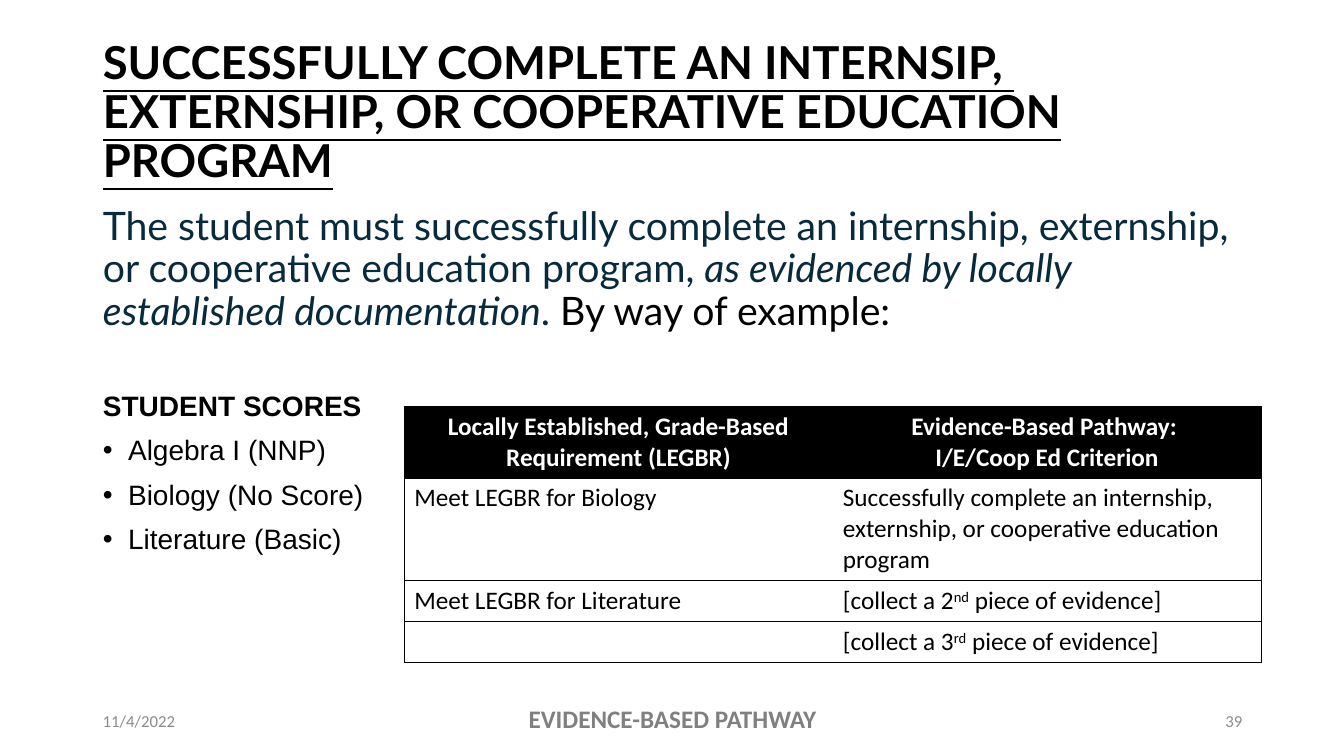
from dataclasses import dataclass

from lxml import etree
from pptx import Presentation
from pptx.dml.color import RGBColor
from pptx.enum.text import MSO_ANCHOR, MSO_AUTO_SIZE, PP_ALIGN
from pptx.oxml.ns import qn
from pptx.util import Inches, Pt

LEFT, CENTER, RIGHT = PP_ALIGN.LEFT, PP_ALIGN.CENTER, PP_ALIGN.RIGHT
TOP, MIDDLE = MSO_ANCHOR.TOP, MSO_ANCHOR.MIDDLE
NO_AUTOFIT = MSO_AUTO_SIZE.NONE


@dataclass(frozen=True)
class Theme:
    """Colours, fonts and type sizes of the slide."""
    black: str = "000000"
    white: str = "FFFFFF"
    navy: str = "082A3D"
    footer_grey: str = "808080"
    date_grey: str = "8C8C8C"
    heading_font: str = "Lato"
    list_font: str = "Arial"
    table_font: str = "Calibri"
    title_size: float = 32.4
    intro_size: float = 28
    list_size: float = 20
    table_size: float = 18
    small_size: float = 12
    line_spacing: float = 0.9


THEME = Theme()
TITLE_LINES = ["SUCCESSFULLY COMPLETE AN INTERNSIP, ",
               "EXTERNSHIP, OR COOPERATIVE EDUCATION PROGRAM"]
INTRO = [
    ("The student must successfully complete an internship, externship, "
     "or cooperative education program, ", THEME.navy, False),
    ("as evidenced by locally established documentation", THEME.navy, True),
    (". ", THEME.navy, False),
    ("By way of example:", THEME.black, False),
]
SCORES = ["Algebra I (NNP)", "Biology (No Score)", "Literature (Basic)"]
HEADERS = [["Locally Established, Grade-Based Requirement (LEGBR)"],
           ["Evidence-Based Pathway: ", "I/E/Coop Ed Criterion"]]
CRITERIA = [
    [["Meet LEGBR for Biology"],
     ["Successfully complete an internship, externship, or cooperative education program"]],
    [["Meet LEGBR for Literature"], ["[collect a 2", "nd", " piece of evidence]"]],
    [[], ["[collect a 3", "rd", " piece of evidence]"]],
]
ROW_HEIGHTS = [0.7, 1.02, 0.4, 0.4]


def style(paragraph, font_name, size, color, bold=False):
    """Set the shared font of a paragraph."""
    font = paragraph.font
    font.name, font.size, font.bold = font_name, Pt(size), bold
    font.color.rgb = RGBColor.from_string(color)


def place(placeholder, box, anchor):
    """Move a placeholder to a box and prepare its text frame."""
    placeholder.left, placeholder.top, placeholder.width, placeholder.height = map(Inches, box)
    frame = placeholder.text_frame
    frame.word_wrap, frame.auto_size, frame.vertical_anchor = True, NO_AUTOFIT, anchor
    return frame


def set_bullet(paragraph, bulleted):
    """Give a paragraph a hanging round bullet, or none."""
    properties = paragraph._p.get_or_add_pPr()
    indent = Inches(0.25) if bulleted else 0
    properties.set("marL", str(indent))
    properties.set("indent", str(-indent))
    if bulleted:
        etree.SubElement(properties, qn("a:buChar"), char="•")
    else:
        etree.SubElement(properties, qn("a:buNone"))


def fill_title(title, box):
    """Write the underlined title."""
    heading = place(title, box, MIDDLE).paragraphs[0]
    heading.alignment, heading.line_spacing = LEFT, THEME.line_spacing
    style(heading, THEME.heading_font, THEME.title_size, THEME.black, True)
    heading.font.underline = True
    for index, line in enumerate(TITLE_LINES):
        if index:
            heading.add_line_break()
        heading.add_run().text = line


def fill_body(body, box):
    """Write the introduction and the list of student scores."""
    frame = place(body, box, TOP)
    intro = frame.paragraphs[0]
    set_bullet(intro, False)
    intro.line_spacing, intro.space_before = THEME.line_spacing, Pt(0)
    intro.font.name, intro.font.size = THEME.heading_font, Pt(THEME.intro_size)
    for text, color, italic in INTRO:
        phrase = intro.add_run()
        phrase.text, phrase.font.italic = text, italic
        phrase.font.color.rgb = RGBColor.from_string(color)
    for index, text in enumerate(["STUDENT SCORES", *SCORES]):
        is_heading = index == 0
        score = frame.add_paragraph()
        score.text = text
        set_bullet(score, not is_heading)
        score.line_spacing = THEME.line_spacing
        score.space_before = Pt(42 if is_heading else 10)
        style(score, THEME.list_font, THEME.list_size, THEME.black, is_heading)


def set_borders(cell, visible_sides):
    """Draw thin black lines on the visible sides of a cell."""
    properties = cell._tc.get_or_add_tcPr()
    for side in "LRTB":
        line = etree.SubElement(properties, qn(f"a:ln{side}"), w=str(Pt(0.5)))
        if side in visible_sides:
            solid = etree.SubElement(line, qn("a:solidFill"))
            etree.SubElement(solid, qn("a:srgbClr"), val=THEME.black)
        else:
            etree.SubElement(line, qn("a:noFill"))


def paint_cell(cell, column, fill):
    """Give a cell its outer borders and fill."""
    set_borders(cell, "LTB" if column == 0 else "RTB")
    cell.fill.solid()
    cell.fill.fore_color.rgb = RGBColor.from_string(fill)


def add_criteria_table(slide, box):
    """Add the table that compares the two requirements."""
    table = slide.shapes.add_table(len(ROW_HEIGHTS), len(HEADERS), *map(Inches, box)).table
    table.first_row = table.horz_banding = False
    for row, height in zip(table.rows, ROW_HEIGHTS):
        row.height = Inches(height)
    for column, lines in enumerate(HEADERS):
        cell = table.cell(0, column)
        paint_cell(cell, column, THEME.black)
        cell.vertical_anchor = MIDDLE
        cell.text = "\n".join(lines)
        for header in cell.text_frame.paragraphs:
            header.alignment = CENTER
            style(header, THEME.table_font, THEME.table_size, THEME.white, True)
    for row_index, row in enumerate(CRITERIA, 1):
        for column, parts in enumerate(row):
            cell = table.cell(row_index, column)
            paint_cell(cell, column, THEME.white)
            criterion = cell.text_frame.paragraphs[0]
            style(criterion, THEME.table_font, THEME.table_size, THEME.black)
            for index, text in enumerate(parts):
                part = criterion.add_run()
                part.text = text
                if index == 1:
                    part._r.get_or_add_rPr().set("baseline", "30000")


def add_footer_text(slide, box, text, alignment, anchor, size, color, bold=False):
    """Add one text of the footer."""
    frame = slide.shapes.add_textbox(*map(Inches, box)).text_frame
    frame.word_wrap, frame.vertical_anchor = True, anchor
    label = frame.paragraphs[0]
    label.text, label.alignment = text, alignment
    style(label, THEME.table_font, size, color, bold)


def add_footer(slide, box):
    """Add the section name, date and page number across a box."""
    left, top, width, height = box
    side_width = 3
    small_top = top + 0.02
    add_footer_text(slide, box, "EVIDENCE-BASED PATHWAY", CENTER, TOP,
                    THEME.table_size, THEME.footer_grey, True)
    add_footer_text(slide, (left, small_top, side_width, height), "11/4/2022",
                    LEFT, MIDDLE, THEME.small_size, THEME.date_grey)
    add_footer_text(slide, (left + width - side_width, small_top, side_width, height), "39",
                    RIGHT, MIDDLE, THEME.small_size, THEME.date_grey)


def main():
    """Build and save the slide."""
    presentation = Presentation()
    presentation.slide_width, presentation.slide_height = Inches(13.33), Inches(7.5)
    slide = presentation.slides.add_slide(presentation.slide_layouts[1])
    margin, content_width = 0.92, 11.5
    fill_title(slide.shapes.title, (margin, 0.4, content_width, 1.45))
    fill_body(slide.placeholders[1], (margin, 2, content_width, 4.76))
    add_criteria_table(slide, (4.01, 4.03, 8.5, sum(ROW_HEIGHTS)))
    add_footer(slide, (margin, 6.93, content_width, 0.4))
    presentation.save("out.pptx")


if __name__ == "__main__":
    main()
